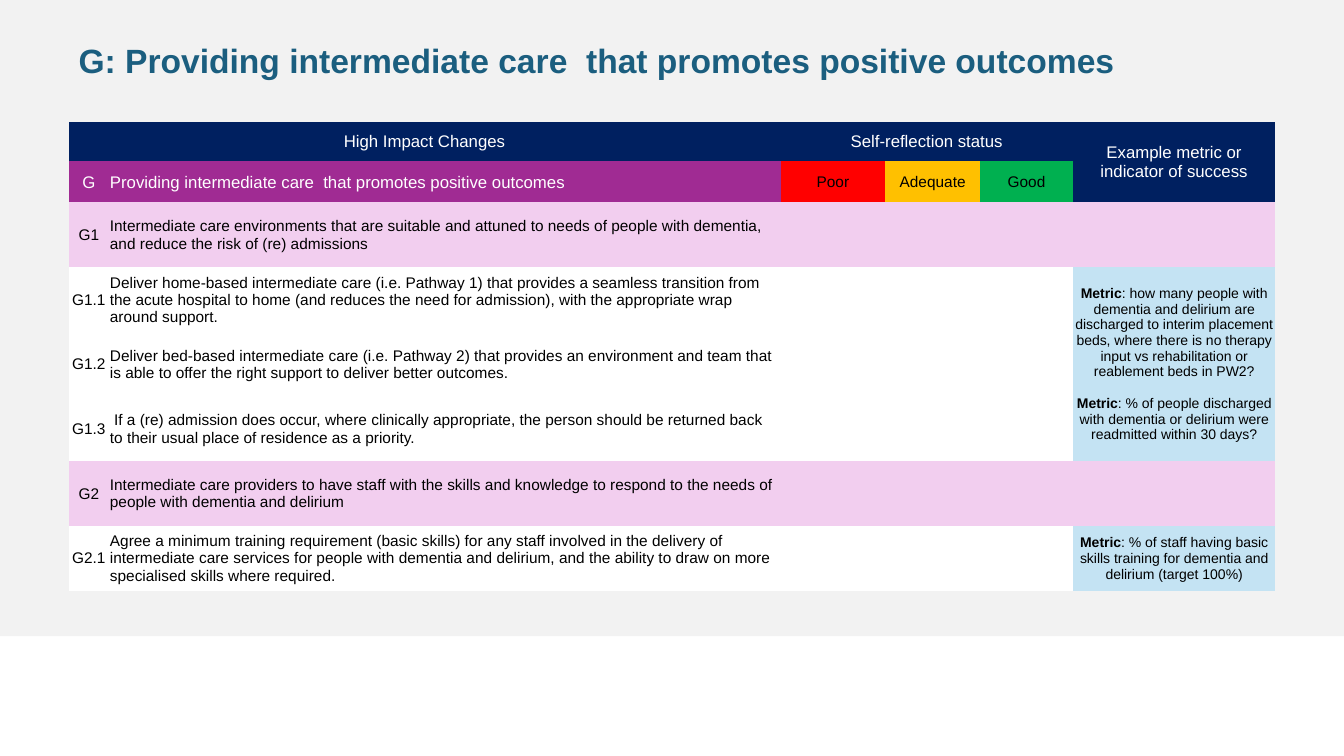
from pptx import Presentation
from pptx.dml.color import RGBColor
from pptx.enum.text import MSO_ANCHOR, PP_ALIGN
from pptx.enum.shapes import MSO_SHAPE
from pptx.oxml.ns import qn
from pptx.util import Cm, Pt

LEFT, CENTER = PP_ALIGN.LEFT, PP_ALIGN.CENTER
MIDDLE = MSO_ANCHOR.MIDDLE
RECTANGLE = MSO_SHAPE.RECTANGLE

WHITE = RGBColor(0xFF, 0xFF, 0xFF)
BLACK = RGBColor(0x00, 0x00, 0x00)
PANEL_GREY = RGBColor(0xF2, 0xF2, 0xF2)
TITLE_BLUE = RGBColor(0x1B, 0x5E, 0x7F)
NAVY = RGBColor(0x00, 0x20, 0x60)
PURPLE = RGBColor(0xA0, 0x2B, 0x93)
PINK = RGBColor(0xF2, 0xCE, 0xEF)
METRIC_BLUE = RGBColor(0xC4, 0xE3, 0xF3)
RED = RGBColor(0xFF, 0x00, 0x00)
AMBER = RGBColor(0xFF, 0xC0, 0x00)
GREEN = RGBColor(0x00, 0xB0, 0x50)

NO_STYLE_NO_GRID = "{2D5ABB26-0587-4C30-8999-92F81FD0307C}"
COLUMN_WIDTHS = [1.02, 16.92, 2.64, 2.39, 2.34, 5.1]
HEADER_HEIGHTS = [0.99, 1.04]
CHANGE_HEIGHT = 1.63
METRIC_COLUMN = 5

THEME = "Providing intermediate care  that promotes positive outcomes"
RATINGS = [("Poor", RED), ("Adequate", AMBER), ("Good", GREEN)]
CHANGES = [
    ("G1", "Intermediate care environments that are suitable and attuned to needs of people "
           "with dementia, and reduce the risk of (re) admissions"),
    ("G1.1", "Deliver home-based intermediate care (i.e. Pathway 1) that provides a seamless "
             "transition from the acute hospital to home (and reduces the need for admission), "
             "with the appropriate wrap around support."),
    ("G1.2", "Deliver bed-based intermediate care (i.e. Pathway 2) that provides an environment "
             "and team that is able to offer the right support to deliver better outcomes."),
    ("G1.3", " If a (re) admission does occur, where clinically appropriate, the person should "
             "be returned back to their usual place of residence as a priority."),
    ("G2", "Intermediate care providers to have staff with the skills and knowledge to respond "
           "to the needs of people with dementia and delirium"),
    ("G2.1", "Agree a minimum training requirement (basic skills) for any staff involved in the "
             "delivery of intermediate care services for people with dementia and delirium, and "
             "the ability to draw on more specialised skills where required."),
]
# First row, last row, metrics
METRIC_BLOCKS = [
    (3, 5, ["how many people with dementia and delirium are discharged to interim placement "
            "beds, where there is no therapy input vs rehabilitation or reablement beds in PW2?",
            "% of people discharged with dementia or delirium were readmitted within 30 days?"]),
    (7, 7, ["% of staff having basic skills training for dementia and delirium (target 100%)"]),
]


def add_text(paragraph, text, size=11, color=BLACK, bold=False, align=LEFT):
    paragraph.alignment = align
    run = paragraph.add_run()
    run.text = text
    run.font.name = "Arial"
    run.font.size = Pt(size)
    run.font.bold = bold
    run.font.color.rgb = color


def fill_cell(cell, color):
    cell.fill.solid()
    cell.fill.fore_color.rgb = color
    cell.vertical_anchor = MIDDLE
    cell.margin_left = cell.margin_right = cell.margin_top = Cm(0.02)
    cell.margin_bottom = 0


def write_cell(cell, text, fill, **text_format):
    fill_cell(cell, fill)
    add_text(cell.text_frame.paragraphs[0], text, **text_format)


def add_background(slide, presentation):
    panel = slide.shapes.add_shape(RECTANGLE, 0, 0, presentation.slide_width, Cm(16.03))
    panel.shadow.inherit = False
    panel.fill.solid()
    panel.fill.fore_color.rgb = PANEL_GREY
    panel.line.fill.background()


def add_title(slide):
    title = slide.shapes.add_textbox(Cm(1.73), Cm(0.76), Cm(30.41), Cm(1.3))
    title.text_frame.word_wrap = True
    paragraph = title.text_frame.paragraphs[0]
    paragraph.line_spacing = Pt(32)
    add_text(paragraph, f"G: {THEME}", size=24, color=TITLE_BLUE, bold=True)


def add_plain_table(slide):
    """Add the sized table without style, banding or borders."""
    heights = HEADER_HEIGHTS + [CHANGE_HEIGHT] * len(CHANGES)
    frame = slide.shapes.add_table(len(heights), len(COLUMN_WIDTHS), Cm(1.73), Cm(3.07),
                                   Cm(sum(COLUMN_WIDTHS)), Cm(sum(heights)))
    table = frame.table
    table.first_row = table.horz_banding = False
    table._tbl.tblPr.find(qn("a:tableStyleId")).text = NO_STYLE_NO_GRID
    for column, width in zip(table.columns, COLUMN_WIDTHS):
        column.width = Cm(width)
    for row, height in zip(table.rows, heights):
        row.height = Cm(height)
    return table


def write_headers(table):
    headers = [
        ("High Impact Changes", (0, 0), (0, 1)),
        ("Self-reflection status", (0, 2), (0, 4)),
        ("Example metric or indicator of success", (0, METRIC_COLUMN), (1, METRIC_COLUMN)),
    ]
    for text, first, last in headers:
        table.cell(*first).merge(table.cell(*last))
        write_cell(table.cell(*first), text, NAVY, size=12, color=WHITE, align=CENTER)
    write_cell(table.cell(1, 0), "G", PURPLE, size=12, color=WHITE, align=CENTER)
    write_cell(table.cell(1, 1), THEME, PURPLE, size=12, color=WHITE)
    for column, (rating, color) in enumerate(RATINGS, start=2):
        write_cell(table.cell(1, column), rating, color, align=CENTER)


def write_changes(table):
    for row, (code, text) in enumerate(CHANGES, start=len(HEADER_HEIGHTS)):
        fill = WHITE if "." in code else PINK
        write_cell(table.cell(row, 0), code, fill, align=CENTER)
        write_cell(table.cell(row, 1), text, fill)
        for column in range(2, len(COLUMN_WIDTHS)):
            fill_cell(table.cell(row, column), fill)


def write_metrics(table):
    for first_row, last_row, metrics in METRIC_BLOCKS:
        cell = table.cell(first_row, METRIC_COLUMN)
        if last_row > first_row:
            cell.merge(table.cell(last_row, METRIC_COLUMN))
        fill_cell(cell, METRIC_BLUE)
        for index, metric in enumerate(metrics):
            if index == 0:
                paragraph = cell.text_frame.paragraphs[0]
            else:
                paragraph = cell.text_frame.add_paragraph()
                paragraph.space_before = Pt(11.5)
            add_text(paragraph, "Metric", size=10, bold=True, align=CENTER)
            add_text(paragraph, f": {metric}", size=10, align=CENTER)


def main():
    presentation = Presentation()
    presentation.slide_width = Cm(33.87)
    presentation.slide_height = Cm(19.05)
    slide = presentation.slides.add_slide(presentation.slide_layouts[6])
    add_background(slide, presentation)
    add_title(slide)
    table = add_plain_table(slide)
    write_headers(table)
    write_changes(table)
    write_metrics(table)
    presentation.save("out.pptx")


if __name__ == "__main__":
    main()
